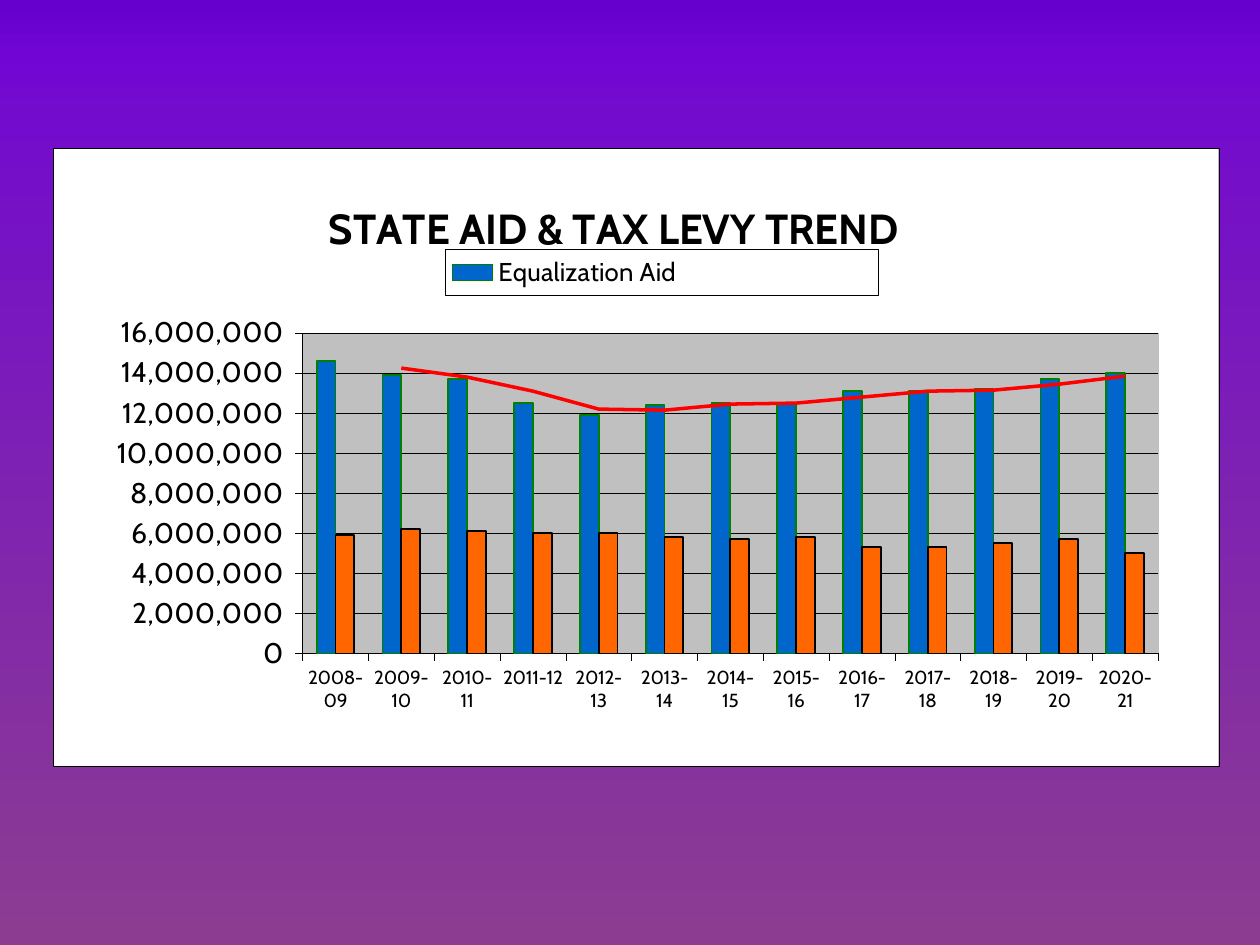
import pptx
import pptx.chart.data
import pptx.dml.color
import pptx.enum.chart
import pptx.oxml
import pptx.oxml.ns
import pptx.util

PX = 914400 / 126
FACE = "Cabin"
HEX = {"ink": "000000", "paper": "FFFFFF", "plot": "C0C0C0", "aid": "0066CC",
       "edge": "008000", "levy": "FF6600", "trend": "FF0000"}
STOPS = {0: "6600CC", 6: "7005D4", 12: "730CCC", 100: "8C3D91"}
NS = pptx.oxml.ns.nsdecls("c", "a")
qn = pptx.oxml.ns.qn


def frame(fill, line, width):
    """Shape properties with a solid fill and a solid line."""
    return pptx.oxml.parse_xml(
        f'<c:spPr {NS}><a:solidFill><a:srgbClr val="{HEX[fill]}"/></a:solidFill>'
        f'<a:ln w="{int(width * 12700)}"><a:solidFill><a:srgbClr val="{HEX[line]}"/>'
        '</a:solidFill></a:ln></c:spPr>')


def place(node, mark, spot, inner=""):
    """Set a manual layout just before the child named mark."""
    for old in node.findall(qn("c:layout")):
        node.remove(old)
    modes = "".join(f'<c:{k}Mode val="edge"/>' for k in "xy")
    sides = "".join(f'<c:{k} val="{v}"/>' for k, v in zip("xywh", spot))
    node.find(qn(mark)).addprevious(pptx.oxml.parse_xml(
        f"<c:layout {NS}><c:manualLayout>{inner}{modes}{sides}</c:manualLayout></c:layout>"))


deck = pptx.Presentation()
deck.slide_width, deck.slide_height = int(1260 * PX), int(945 * PX)
slide = deck.slides.add_slide(deck.slide_layouts[6])

# Purple background, top to bottom
back = slide.background.fill
back.gradient()
back.gradient_angle = 270
stops = next(slide._element.iter(qn("a:gsLst")))
for old in list(stops):
    stops.remove(old)
for pos, tone in STOPS.items():
    stops.append(pptx.oxml.parse_xml(
        f'<a:gs {NS} pos="{pos * 1000}"><a:srgbClr val="{tone}"/></a:gs>'))

# Data, in units of 100,000
data = pptx.chart.data.CategoryChartData(number_format="#,##0")
data.categories = [f"20{y:02d}-{y + 1:02d}" for y in range(8, 21)]
rows = {
    "Equalization Aid": [146, 139, 137, 125, 119, 124, 125, 125, 131, 131, 132, 137, 140],
    "Tax Levy": [59, 62, 61, 60, 60, 58, 57, 58, 53, 53, 55, 57, 50],
}
for name, vals in rows.items():
    data.add_series(name, [v * 100000 for v in vals])
box = [int(n * PX) for n in (53, 148, 1166, 619)]
chart = slide.shapes.add_chart(
    pptx.enum.chart.XL_CHART_TYPE.COLUMN_CLUSTERED, *box, data).chart

# Title and legend
chart.has_title = chart.has_legend = True
title = chart.chart_title.text_frame
title.text = "STATE AID & TAX LEVY TREND"
legend = chart.legend
legend.position = pptx.enum.chart.XL_LEGEND_POSITION.TOP
legend.include_in_layout = False

# Axes
cat, val = chart.category_axis, chart.value_axis
formats = {
    cat: {"has_major_gridlines": False},
    val: {"has_major_gridlines": True, "minimum_scale": 0, "major_unit": 2000000},
    val.tick_labels: {"number_format": r"#,##0_);\(#,##0\)",
                      "number_format_is_linked": False},
}
for part, look in formats.items():
    for key, value in look.items():
        setattr(part, key, value)
for axis in (cat, val):
    axis.major_tick_mark = pptx.enum.chart.XL_TICK_MARK.OUTSIDE
for line in (cat.format.line, val.format.line, val.major_gridlines.format.line):
    line.color.rgb = pptx.dml.color.RGBColor.from_string(HEX["ink"])
    line.width = pptx.util.Pt(0.25)

# Fonts
fonts = [(chart.font, 16.2, False), (title.paragraphs[0].runs[0].font, 24, True),
         (legend.font, 14.7, False), (cat.tick_labels.font, 10.8, False),
         (val.tick_labels.font, 16.2, False)]
for font, size, bold in fonts:
    look = {"name": FACE, "size": pptx.util.Pt(size), "bold": bold}
    for key, value in look.items():
        setattr(font, key, value)
    font.color.rgb = pptx.dml.color.RGBColor.from_string(HEX["ink"])

# Columns
plot = chart.plots[0]
plot.gap_width, plot.overlap, plot.vary_by_categories = 150, 0, False
for bar, fill, edge in zip(plot.series, ("aid", "levy"), ("edge", "ink")):
    bar.invert_if_negative = False
    bar.format.fill.solid()
    bar.format.fill.fore_color.rgb = pptx.dml.color.RGBColor.from_string(HEX[fill])
    bar.format.line.color.rgb = pptx.dml.color.RGBColor.from_string(HEX[edge])
    bar.format.line.width = pptx.util.Pt(1)

# Moving average over the aid columns
plot.series[0]._element.find(qn("c:cat")).addprevious(pptx.oxml.parse_xml(
    f'<c:trendline {NS}><c:spPr><a:ln w="25400"><a:solidFill>'
    f'<a:srgbClr val="{HEX["trend"]}"/></a:solidFill></a:ln></c:spPr>'
    '<c:trendlineType val="movingAvg"/><c:period val="2"/>'
    '<c:dispRSqr val="0"/><c:dispEq val="0"/></c:trendline>'))

# Manual places, as shares of the chart
root = chart._chartSpace.find(qn("c:chart"))
area, key = root.find(qn("c:plotArea")), root.find(qn("c:legend"))
place(area, "c:barChart", (0.214, 0.299, 0.734, 0.518),
      '<c:layoutTarget val="inner"/>')
place(root.find(qn("c:title")), "c:overlay", (0.23, 0.07))
place(key, "c:overlay", (0.336, 0.164, 0.372, 0.074))
key.find(qn("c:legendPos")).addnext(pptx.oxml.parse_xml(
    f'<c:legendEntry {NS}><c:idx val="2"/><c:delete val="1"/></c:legendEntry>'))

# Frames of chart, plot and legend
root.addnext(frame("paper", "ink", 0.25))
key.find(qn("c:overlay")).addnext(frame("paper", "ink", 0.25))
area.append(frame("plot", "plot", 0.25))

deck.save("out.pptx")
